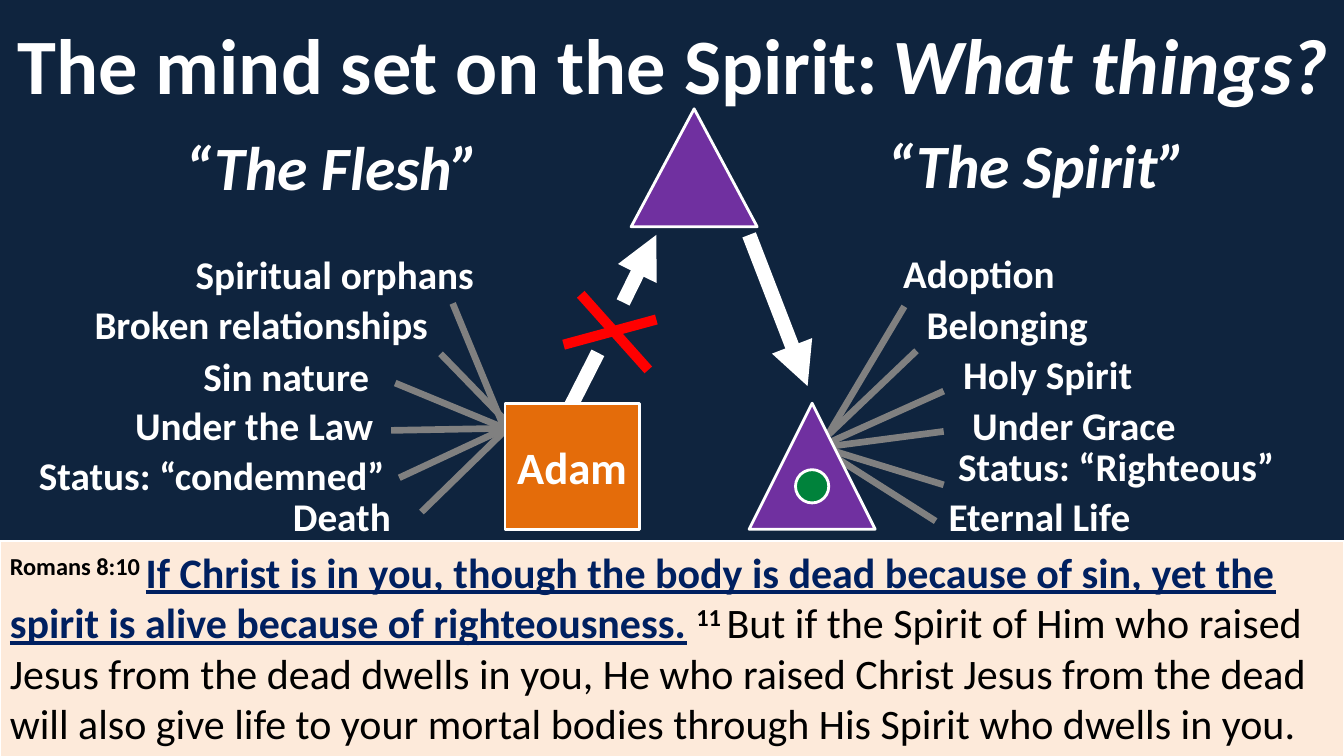
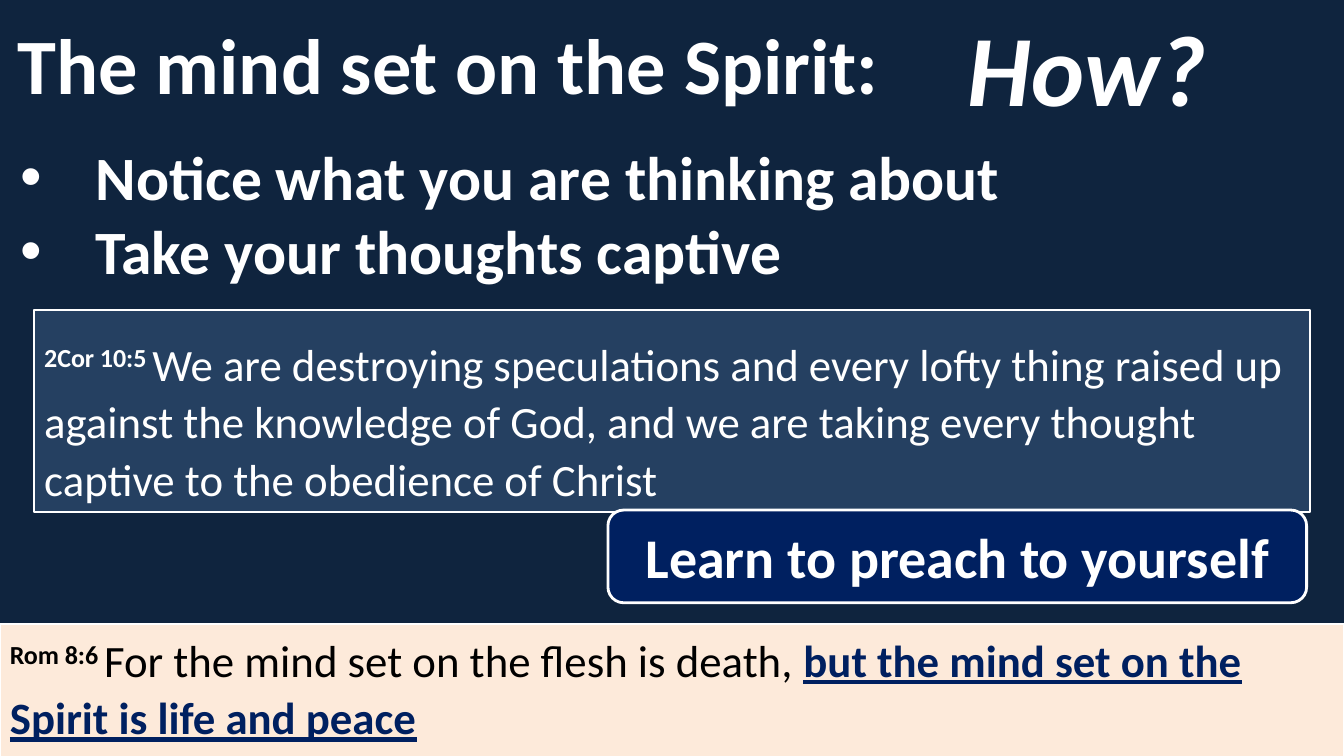
import dataclasses
import typing

import pptx
import pptx.dml.color
import pptx.enum.shapes
import pptx.enum.text
import pptx.oxml.ns
import pptx.util
from lxml import etree

EMU_PER_PX = 9144
WIDTH, HEIGHT = 1333, 750
LABEL_W, LABEL_H = 400, 58
COLORS = {
    "navy": "0F243E", "panel": "254061", "ink": "002060", "cream": "FDEADA",
    "white": "FFFFFF", "black": "000000", "gray": "808080", "red": "FF0000",
    "purple": "7030A0", "orange": "E46C0A", "green": "00823B",
}
SHAPE = pptx.enum.shapes.MSO_SHAPE
ALIGN = pptx.enum.text.PP_ALIGN
ANCHOR = pptx.enum.text.MSO_ANCHOR


class Box(typing.NamedTuple):
    x: int
    y: int
    w: int
    h: int


class Segment(typing.NamedTuple):
    x1: int
    y1: int
    x2: int
    y2: int


@dataclasses.dataclass(frozen=True)
class Run:
    text: str
    size: int
    color: str = "white"
    bold: bool = True
    italic: bool = False
    underline: bool = False
    raised: bool = False


@dataclasses.dataclass(frozen=True)
class Trait:
    text: str
    center: int
    top: int
    ray: Segment


FLESH = [
    Trait("Spiritual orphans", 332, 243, Segment(449, 301, 501, 427)),
    Trait("Broken relationships", 259, 292, Segment(437, 351, 501, 417)),
    Trait("Sin nature", 284, 344, Segment(392, 380, 501, 425)),
    Trait("Under the Law", 252, 392, Segment(388, 427, 496, 425)),
    Trait("Status: “condemned”", 210, 442, Segment(396, 474, 501, 425)),
    Trait("Death", 339, 483, Segment(418, 508, 503, 425)),
]
SPIRIT = [
    Trait("Adoption", 971, 242, Segment(897, 304, 822, 430)),
    Trait("Belonging", 999, 292, Segment(909, 348, 822, 431)),
    Trait("Holy Spirit", 1039, 342, Segment(936, 388, 818, 441)),
    Trait("Under Grace", 1065, 392, Segment(936, 428, 822, 443)),
    Trait("Status: “Righteous”", 1107, 433, Segment(936, 481, 822, 446)),
    Trait("Eternal Life", 1031, 483, Segment(928, 517, 818, 447)),
]


def px(n: int) -> int:
    return pptx.util.Emu(n * EMU_PER_PX)


def rgb(name: str) -> pptx.dml.color.RGBColor:
    return pptx.dml.color.RGBColor.from_string(COLORS[name])


def fill_paragraph(p, runs: list[Run], **formats) -> None:
    for name, value in formats.items():
        setattr(p, name, value)
    for run in runs:
        r = p.add_run()
        r.text = run.text
        font = {"name": "Calibri", "size": pptx.util.Pt(run.size), "bold": run.bold,
                "italic": run.italic, "underline": run.underline}
        for name, value in font.items():
            setattr(r.font, name, value)
        r.font.color.rgb = rgb(run.color)
        if run.raised:
            r._r.get_or_add_rPr().set("baseline", "30000")


def set_frame(sp, **formats):
    tf = sp.text_frame
    for name, value in ({"word_wrap": True} | formats).items():
        setattr(tf, name, value)
    return tf


def add_text(s, box: Box, run: Run, align=ALIGN.LEFT) -> None:
    sp = s.shapes.add_textbox(*map(px, box))
    tf = set_frame(sp, vertical_anchor=ANCHOR.MIDDLE)
    fill_paragraph(tf.paragraphs[0], [run], alignment=align)


def add_bullets(s, box: Box, items: list[str]) -> None:
    tf = set_frame(s.shapes.add_textbox(*map(px, box)))
    for i, item in enumerate(items):
        p = tf.add_paragraph() if i else tf.paragraphs[0]
        pPr = p._p.get_or_add_pPr()
        pPr.set("marL", str(px(75)))
        pPr.set("indent", str(px(-75)))
        for tag, attr, value in (("buFont", "typeface", "Arial"), ("buChar", "char", "•")):
            etree.SubElement(pPr, pptx.oxml.ns.qn(f"a:{tag}")).set(attr, value)
        fill_paragraph(p, [Run(item, 44)])


def add_shape(s, kind, box: Box, fill: str, line: float = 2, run: Run | None = None):
    sp = s.shapes.add_shape(kind, *map(px, box))
    sp.shadow.inherit = False
    sp.fill.solid()
    sp.fill.fore_color.rgb = rgb(fill)
    sp.line.color.rgb = rgb("white")
    sp.line.width = pptx.util.Pt(line)
    if run:
        tf = set_frame(sp, vertical_anchor=ANCHOR.MIDDLE)
        fill_paragraph(tf.paragraphs[0], [run], alignment=ALIGN.CENTER)
    return sp


def add_passage(s, box: Box, fill: str, runs: list[Run],
                spacing: float = 1.0, inset: int = 5) -> None:
    sp = add_shape(s, SHAPE.RECTANGLE, box, fill, 1.5)
    tf = set_frame(sp, vertical_anchor=ANCHOR.TOP, margin_top=px(inset))
    fill_paragraph(tf.paragraphs[0], runs, alignment=ALIGN.LEFT, line_spacing=spacing)


def add_line(s, seg: Segment, color: str, width: float, arrow: bool = False) -> None:
    sp = s.shapes.add_connector(pptx.enum.shapes.MSO_CONNECTOR.STRAIGHT, *map(px, seg))
    sp.line.color.rgb = rgb(color)
    sp.line.width = pptx.util.Pt(width)
    if arrow:
        ln = sp.line._get_or_add_ln()
        etree.SubElement(ln, pptx.oxml.ns.qn("a:tailEnd")).set("type", "triangle")
    etree.SubElement(sp._element.spPr, pptx.oxml.ns.qn("a:effectLst"))


def add_slide(prs, ending: Run, box: Box):
    s = prs.slides.add_slide(prs.slide_layouts[6])
    s.background.fill.solid()
    s.background.fill.fore_color.rgb = rgb("navy")
    add_text(s, Box(8, -3, 883, 132), Run("The mind set on the Spirit:", 56))
    add_text(s, box, ending)
    return s


def build_what_things(prs) -> None:
    s = add_slide(prs, Run("What things?", 56, italic=True), Box(875, -3, 483, 132))
    for heading, x, y in (("“The Flesh”", 9, 127), ("“The Spirit”", 708, 125)):
        add_text(s, Box(x, y, 642, 75), Run(heading, 44, italic=True), ALIGN.CENTER)

    add_line(s, Segment(559, 417, 593, 350), "white", 10.25)
    for arrow in (Segment(618, 300, 651, 233), Segment(743, 233, 801, 383)):
        add_line(s, arrow, "white", 10.25, True)
    for stroke in (Segment(576, 292, 643, 367), Segment(651, 317, 559, 342)):
        add_line(s, stroke, "red", 7.25)

    for trait in FLESH + SPIRIT:
        add_line(s, trait.ray, "gray", 4.75)
        box = Box(trait.center - LABEL_W // 2, trait.top, LABEL_W, LABEL_H)
        add_text(s, box, Run(trait.text, 28), ALIGN.CENTER)

    add_shape(s, SHAPE.RECTANGLE, Box(501, 400, 133, 125), "orange", run=Run("Adam", 32))
    for box in (Box(626, 108, 125, 117), Box(743, 400, 125, 125)):
        add_shape(s, SHAPE.ISOSCELES_TRIANGLE, box, "purple")
    add_shape(s, SHAPE.OVAL, Box(789, 466, 33, 33), "green")

    add_passage(s, Box(0, 537, WIDTH, 214), "cream", [
        Run("Romans 8:10 ", 30, "black", raised=True),
        Run("If Christ is in you, though the body is dead because of sin, yet the "
            "spirit is alive because of righteousness.", 30, "ink", underline=True),
        Run(" ", 30, "ink"),
        Run("11 ", 30, "black", raised=True),
        Run("But if the Spirit of Him who raised Jesus from the dead dwells in you, "
            "He who raised Christ Jesus from the dead will also give life to your "
            "mortal bodies through His Spirit who dwells in you.", 30, "black", False),
    ])


def build_how(prs) -> None:
    s = add_slide(prs, Run("How?", 72, italic=True), Box(950, 0, 308, 132))
    add_bullets(s, Box(10, 133, 1165, 160),
                ["Notice what you are thinking about", "Take your thoughts captive"])
    add_passage(s, Box(0, 619, WIDTH, 132), "cream", [
        Run("Rom 8:6 ", 32, "black", raised=True),
        Run("For the mind set on the flesh is death, ", 32, "black", False),
        Run("but the mind set on the Spirit is life and peace", 32, "ink", underline=True),
    ], 1.07)
    add_passage(s, Box(34, 308, 1265, 200), "panel", [
        Run("2Cor 10:5 ", 32, raised=True),
        Run("We are destroying speculations and every lofty thing raised up against "
            "the knowledge of God, and we are taking every thought captive to the "
            "obedience of Christ", 32, bold=False),
    ], 1.07, 22)
    sp = add_shape(s, SHAPE.ROUNDED_RECTANGULAR_CALLOUT, Box(603, 506, 693, 92), "ink",
                   run=Run("Learn to preach to yourself", 40))
    for i, value in enumerate((-0.22, 0.5, 0.17)):
        sp.adjustments[i] = value


def main() -> None:
    prs = pptx.Presentation()
    prs.slide_width, prs.slide_height = px(WIDTH), px(HEIGHT)
    build_what_things(prs)
    build_how(prs)
    prs.save("out.pptx")


if __name__ == "__main__":
    main()
